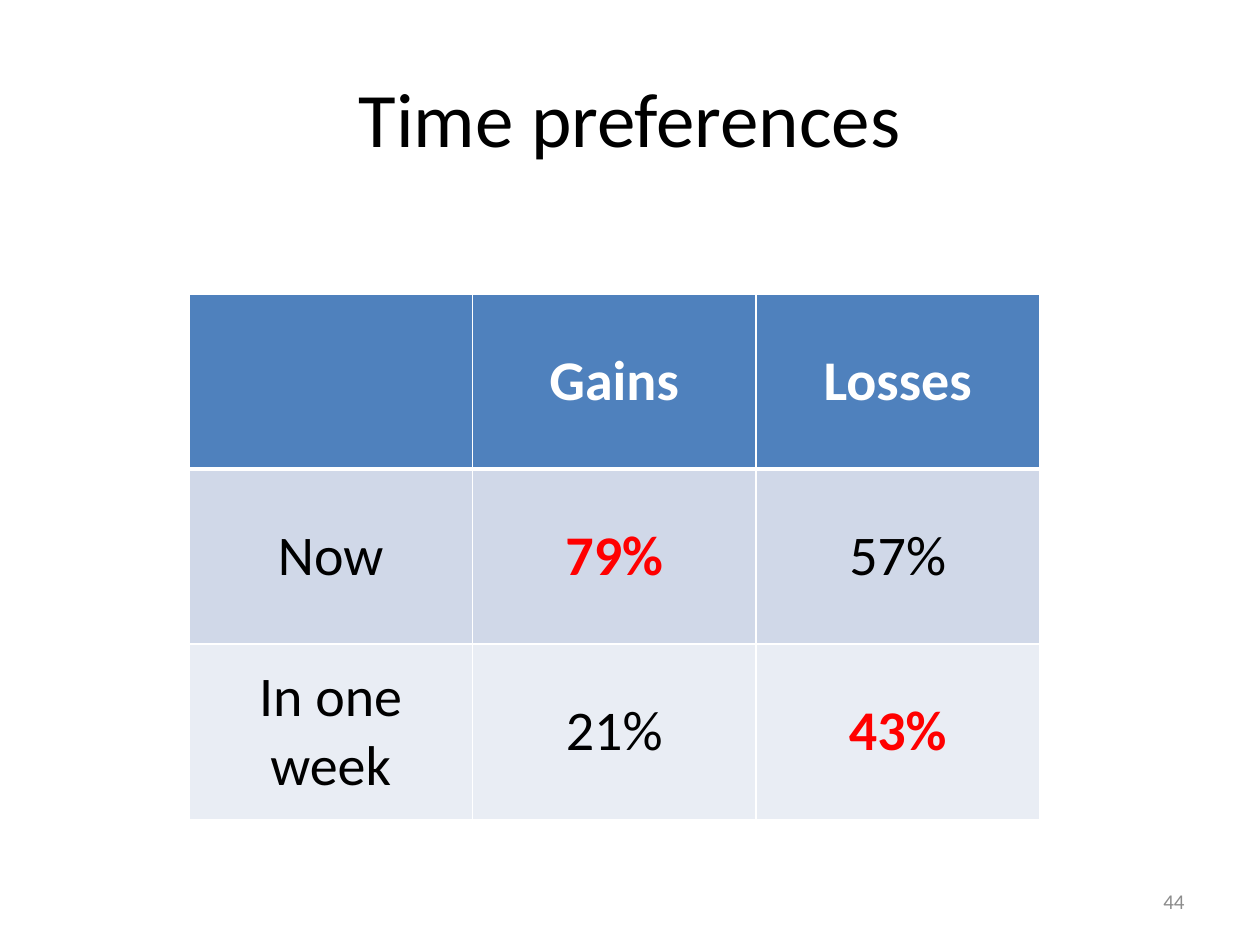
"""Build the time preferences slide: a title, a 3 by 3 table and a page number."""
import pptx
import pptx.util
import pptx.dml.color
import pptx.enum.text
import pptx.oxml
import pptx.oxml.ns

RGBColor = pptx.dml.color.RGBColor
Pt = pptx.util.Pt
ALIGN = pptx.enum.text.PP_ALIGN
MIDDLE = pptx.enum.text.MSO_ANCHOR.MIDDLE

BLACK = RGBColor(0x00, 0x00, 0x00)
WHITE = RGBColor(0xFF, 0xFF, 0xFF)
RED = RGBColor(0xFF, 0x00, 0x00)
GRAY = RGBColor(0x8C, 0x8C, 0x8C)
ROW_FILLS = [
    RGBColor(0x4F, 0x81, 0xBD),
    RGBColor(0xD0, 0xD8, 0xE8),
    RGBColor(0xE9, 0xED, 0xF4),
]

WIDTH = pptx.util.Inches(10)
HEIGHT = pptx.util.Inches(7.5)

ROWS = [
    ["", "Gains", "Losses"],
    ["Now", "79%", "57%"],
    ["In one week", "21%", "43%"],
]
MAJORITY_SHIFT = {"79%", "43%"}


def share(x, y, w, h):
    """Turn shares of the slide's size into left, top, width and height."""
    return int(x * WIDTH), int(y * HEIGHT), int(w * WIDTH), int(h * HEIGHT)


def write(tf, text, align, color, **font):
    """Write one formatted paragraph into a text frame."""
    p = tf.paragraphs[0]
    p.alignment = align
    r = p.add_run()
    r.text = text
    for name, value in {"name": "Calibri", **font}.items():
        setattr(r.font, name, value)
    r.font.color.rgb = color


def add_text(s, box, text, align, color, size):
    """Add a wrapped, vertically centred text box."""
    tf = s.shapes.add_textbox(*box).text_frame
    for name, value in {"word_wrap": True, "vertical_anchor": MIDDLE}.items():
        setattr(tf, name, value)
    write(tf, text, align, color, size=Pt(size))


def set_borders(cell, widths):
    """Draw white cell borders, given their widths in points by side."""
    tcPr = cell._tc.get_or_add_tcPr()
    for side, width in widths.items():
        tcPr.append(pptx.oxml.parse_xml(
            f'<a:ln{side} {pptx.oxml.ns.nsdecls("a")} w="{Pt(width)}">'
            f'<a:solidFill><a:srgbClr val="{WHITE}"/></a:solidFill></a:ln{side}>'
        ))


def add_table(s, box, rows):
    """Add an evenly divided table with a header row and filled body rows."""
    table = s.shapes.add_table(len(rows), len(rows[0]), *box).table
    for i, row in enumerate(rows):
        for j, text in enumerate(row):
            cell = table.cell(i, j)
            cell.vertical_anchor = MIDDLE
            set_borders(cell, {"L": 1, "R": 1, "T": 3 if i == 1 else 1, "B": 3 if i == 0 else 1})
            cell.fill.solid()
            cell.fill.fore_color.rgb = ROW_FILLS[i]
            if text:
                strong = text in MAJORITY_SHIFT
                color = WHITE if i == 0 else RED if strong else BLACK
                write(cell.text_frame, text, ALIGN.CENTER, color, size=Pt(32), bold=i == 0 or strong)


def main():
    """Build and save the slide."""
    prs = pptx.Presentation()
    for name, value in {"slide_width": WIDTH, "slide_height": HEIGHT}.items():
        setattr(prs, name, value)
    s = prs.slides.add_slide(prs.slide_layouts[6])
    add_text(s, share(0.05, 0.04, 0.9, 1 / 6), "Time preferences", ALIGN.CENTER, BLACK, 44)
    add_text(s, share(0.717, 0.927, 0.233, 0.053), "44", ALIGN.RIGHT, GRAY, 12)
    add_table(s, share(0.15, 0.311, 0.675, 0.556), ROWS)
    prs.save("out.pptx")


if __name__ == "__main__":
    main()
